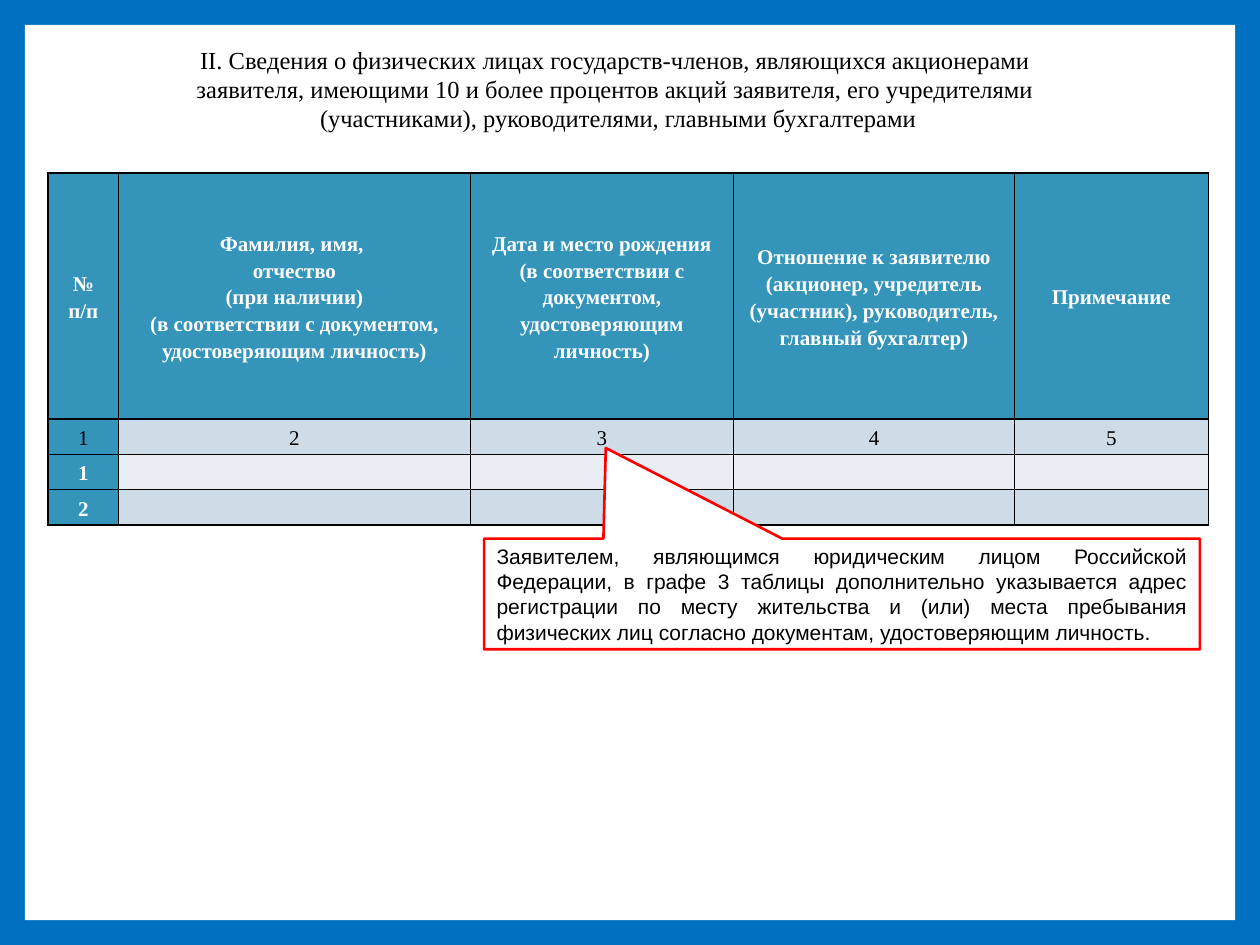
from dataclasses import dataclass

from lxml.etree import SubElement
from pptx import Presentation
from pptx.dml.color import RGBColor
from pptx.enum.shapes import MSO_SHAPE
from pptx.enum.text import MSO_ANCHOR, MSO_AUTO_SIZE, PP_ALIGN
from pptx.oxml.ns import qn
from pptx.util import Cm, Pt

HUES = {
    "frame": "0070C0",
    "white": "FFFFFF",
    "black": "000000",
    "head": "3494BA",
    "dark": "CEDCE7",
    "light": "E8EEF3",
    "alert": "FF0000",
}
SERIF, SANS = "Times New Roman", "Arial"


@dataclass
class Box:
    left: float
    top: float
    width: float
    height: float

    def span(self) -> tuple:
        return tuple(Cm(n) for n in (self.left, self.top, self.width, self.height))


@dataclass
class Col:
    width: float
    head: list[str]


@dataclass
class Row:
    cells: list[str]
    fill: str
    bold: bool
    hue: str


COLS = [
    Col(1.42, ["№", "п/п"]),
    Col(7.09, ["Фамилия, имя, ", "отчество", "(при наличии)",
               "(в соответствии с документом, удостоверяющим личность)"]),
    Col(5.31, ["Дата и место рождения",
               "(в соответствии с документом, удостоверяющим личность)"]),
    Col(5.66, ["Отношение к заявителю (акционер, учредитель (участник), "
               "руководитель, главный бухгалтер)"]),
    Col(3.91, ["Примечание"]),
]
ROWS = [
    Row(["1", "2", "3", "4", "5"], "dark", False, "black"),
    Row(["1", "", "", "", ""], "light", True, "white"),
    Row(["2", "", "", "", ""], "dark", True, "white"),
]
HEAD_HIGH, ROW_HIGH = 4.96, 0.71
TITLE = [
    "II. Сведения о физических лицах государств-членов, являющихся акционерами ",
    "заявителя, имеющими 10 и более процентов акций заявителя, его учредителями ",
    "(участниками), руководителями, главными бухгалтерами",
]
NOTE = ["Заявителем, являющимся юридическим лицом Российской Федерации, в графе 3 "
        "таблицы дополнительно указывается адрес регистрации по месту жительства "
        "и (или) места пребывания физических лиц согласно документам, "
        "удостоверяющим личность."]


def tint(name: str) -> RGBColor:
    return RGBColor.from_string(HUES[name])


def paint(fill, name: str) -> None:
    fill.solid()
    fill.fore_color.rgb = tint(name)


def write(frame, lines: list[str], *, size: int = 12, font: str = SERIF,
          hue: str = "black", bold: bool = False, align=PP_ALIGN.CENTER,
          lead: float | None = None, after: int | None = None) -> None:
    frame.word_wrap = True
    for i, line in enumerate(lines):
        para = frame.add_paragraph() if i else frame.paragraphs[0]
        para.alignment = align
        if lead:
            para.line_spacing = lead
        if after:
            para.space_after = Pt(after)
        if not line:
            # An empty cell keeps the text size, so its row stays low
            SubElement(para._p, qn("a:endParaRPr"), sz=str(size * 100))
            continue
        run = para.add_run()
        run.text = line
        run.font.size, run.font.name, run.font.bold = Pt(size), font, bold
        run.font.color.rgb = tint(hue)


def shape(slide, kind, box: Box, fill: str, line: str | None = None):
    item = slide.shapes.add_shape(kind, *box.span())
    item.shadow.inherit = False
    paint(item.fill, fill)
    if line:
        item.line.color.rgb = tint(line)
        item.line.width = Pt(1.5)
    else:
        item.line.fill.background()
    return item


def edge(cell) -> None:
    props = cell._tc.get_or_add_tcPr()
    for i, side in enumerate(("lnL", "lnR", "lnT", "lnB")):
        line = SubElement(props, qn(f"a:{side}"), w=str(Pt(1)))
        solid = SubElement(line, qn("a:solidFill"))
        SubElement(solid, qn("a:srgbClr"), val=HUES["black"])
        props.remove(line)
        props.insert(i, line)


def fill_cell(cell, lines: list[str], fill: str, **form) -> None:
    cell.margin_left = cell.margin_right = Cm(0.13)
    cell.margin_top = cell.margin_bottom = 0
    cell.vertical_anchor = MSO_ANCHOR.MIDDLE
    paint(cell.fill, fill)
    edge(cell)
    write(cell.text_frame, lines, **form)


def grid(slide, left: float, top: float) -> None:
    wide = sum(col.width for col in COLS)
    high = HEAD_HIGH + ROW_HIGH * len(ROWS)
    box = Box(left, top, wide, high)
    table = slide.shapes.add_table(len(ROWS) + 1, len(COLS), *box.span()).table
    table.first_row = table.horz_banding = False
    for i, row in enumerate(table.rows):
        row.height = Cm(ROW_HIGH if i else HEAD_HIGH)
    for x, col in enumerate(COLS):
        table.columns[x].width = Cm(col.width)
        fill_cell(table.cell(0, x), col.head, "head",
                  hue="white", bold=True, lead=1.15)
        for y, row in enumerate(ROWS, 1):
            text = row.cells[x]
            fill_cell(table.cell(y, x), [text], row.fill if x else "head",
                      hue=row.hue, bold=row.bold,
                      lead=1.15 if text else None, after=6 if text else None)


def main() -> None:
    deck = Presentation()
    deck.slide_width, deck.slide_height = Cm(25.4), Cm(19.05)
    slide = deck.slides.add_slide(deck.slide_layouts[6])

    # Blue frame around a white page
    paint(slide.background.fill, "frame")
    shape(slide, MSO_SHAPE.RECTANGLE, Box(0.5, 0.5, 24.4, 18.05), "white")

    # Table of persons
    grid(slide, 0.97, 3.49)

    # Title
    title = slide.shapes.add_textbox(*Box(0.58, 0.76, 23.77, 2.06).span()).text_frame
    title.vertical_anchor = MSO_ANCHOR.MIDDLE
    title.auto_size = MSO_AUTO_SIZE.SHAPE_TO_FIT_TEXT
    write(title, TITLE, size=14)

    # Callout that points at column 3
    note = shape(slide, MSO_SHAPE.RECTANGULAR_CALLOUT,
                 Box(9.76, 10.86, 14.43, 2.23), "white", "alert")
    note.adjustments[0], note.adjustments[1] = -0.33, -1.32
    note.text_frame.vertical_anchor = MSO_ANCHOR.MIDDLE
    write(note.text_frame, NOTE, font=SANS, align=PP_ALIGN.JUSTIFY)

    deck.save("out.pptx")


if __name__ == "__main__":
    main()
